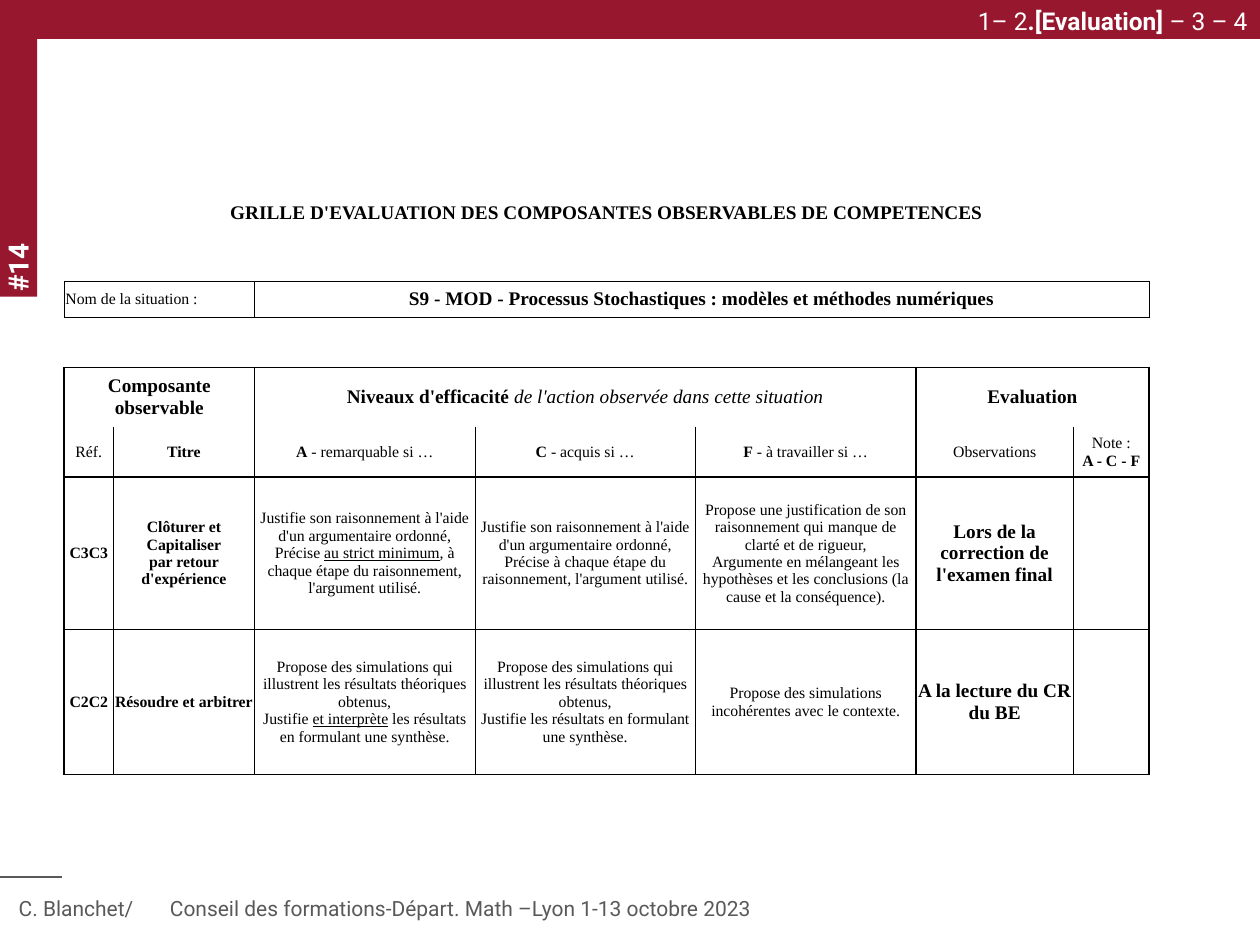
"""Build the slide showing the skills evaluation grid."""
from lxml.etree import SubElement
from pptx import Presentation
from pptx.dml.color import RGBColor
from pptx.enum.shapes import MSO_CONNECTOR as Connector, MSO_SHAPE as Shape
from pptx.enum.text import MSO_ANCHOR as Anchor, PP_ALIGN as Align
from pptx.oxml.ns import qn
from pptx.util import Emu, Inches, Pt

COLORS = {"red": "96172E", "white": "FFFFFF", "grey": "595959", "black": "000000"}
SANS, SERIF = "Roboto", "Times New Roman"
WIDTH, HEIGHT = 10, 7.5
BARS = [((-0.02, 0, 10.02, 0.31), 0), ((-1.04, 1.02, 2.36, 0.31), 270)]
LABELS = [
    ((-0.82, 1.28, 1.91, 0.36), 270, 16, "white", Align.LEFT, [("#14", "b")]),
    ((0.05, 7.06, 8.42, 0.3), 0, 12, "grey", Align.LEFT,
     [("C. Blanchet/\tConseil des formations-Départ. Math –Lyon 1-13 octobre 2023", "")]),
    ((6.78, 0, 3.22, 0.33), 0, 14, "white", Align.RIGHT,
     [("1– 2", ""), (".[Evaluation] ", "b"), ("– 3 – 4", "")]),
]
FOOTER_TAB = 1.2

GRID_AT = (0.51, 1.55)
COLUMNS = [0.39, 1.12, 1.75, 1.75, 1.75, 1.25, 0.6]
ROWS = [0.2, 0.15, 0.24, 0.15, 0.37, 0.35, 1.21, 1.15]
THIN, THICK = 0.5, 0.96
GROUP_EDGES = {0, 2, 5, 7}
ROW_EDGES = [0, 0, THIN, THIN, THICK, 0, THICK, THIN, THIN]
NAME_ROW, FIRST_GROUP_ROW = 2, 4

CELLS = {
    0: [(7, 11, [("GRILLE D'EVALUATION DES COMPOSANTES OBSERVABLES DE COMPETENCES", "b")])],
    2: [(2, 9, [("Nom de la situation :", "")]),
        (5, 11, [("S9 - MOD - Processus Stochastiques : modèles et méthodes numériques", "b")])],
    4: [(2, 11, [("Composante observable", "b")]),
        (3, 11, [("Niveaux d'efficacité ", "b"),
                 ("de l'action observée dans cette situation", "i")]),
        (2, 11, [("Evaluation", "b")])],
    5: [(1, 9, [("Réf.", "")]),
        (1, 9, [("Titre", "b")]),
        (1, 9, [("A", "b"), (" - remarquable si …", "")]),
        (1, 9, [("C", "b"), (" - acquis si …", "")]),
        (1, 9, [("F", "b"), (" - à travailler si …", "")]),
        (1, 9, [("Observations", "")]),
        (1, 9, [("Note :\n", ""), ("A - C - F", "b")])],
    6: [(1, 9, [("C3C3", "b")]),
        (1, 9, [("Clôturer et Capitaliser\npar retour d'expérience", "b")]),
        (1, 9, [("Justifie son raisonnement à l'aide d'un argumentaire ordonné,\nPrécise ", ""),
                ("au strict minimum", "u"),
                (", à chaque étape du raisonnement, l'argument utilisé.", "")]),
        (1, 9, [("Justifie son raisonnement à l'aide d'un argumentaire ordonné,\n"
                 "Précise à chaque étape du raisonnement, l'argument utilisé.", "")]),
        (1, 9, [("Propose une justification de son raisonnement qui manque de clarté et de "
                 "rigueur,\nArgumente en mélangeant les hypothèses et les conclusions "
                 "(la cause et la conséquence).", "")]),
        (1, 11, [("Lors de la correction de l'examen final", "b")])],
    7: [(1, 9, [("C2C2", "b")]),
        (1, 9, [("Résoudre et arbitrer", "b")]),
        (1, 9, [("Propose des simulations qui illustrent les résultats théoriques obtenus,\n"
                 "Justifie ", ""),
                ("et interprète", "u"),
                (" les résultats en formulant une synthèse.", "")]),
        (1, 9, [("Propose des simulations qui illustrent les résultats théoriques obtenus,\n"
                 "Justifie les résultats en formulant une synthèse.", "")]),
        (1, 9, [("Propose des simulations incohérentes avec le contexte.", "")]),
        (1, 11, [("A la lecture du CR du BE", "b")])],
}


def color(name):
    return RGBColor.from_string(COLORS[name])


def inches(values):
    return [Inches(value) for value in values]


def write(para, runs, font, size, tone, align):
    para.alignment = align
    para.font.name, para.font.size = font, Pt(size)
    para.font.color.rgb = color(tone)
    for text, style in runs:
        for index, line in enumerate(text.split("\n")):
            if index:
                para.add_line_break()
            if line:
                span = para.add_run()
                span.text = line
                span.font.bold = "b" in style
                span.font.italic = "i" in style
                span.font.underline = "u" in style


def add_frame(page):
    for place, turn in BARS:
        bar = page.shapes.add_shape(Shape.RECTANGLE, *inches(place))
        bar.rotation = turn
        bar.shadow.inherit = False
        bar.fill.solid()
        bar.fill.fore_color.rgb = color("red")
        bar.line.fill.background()
    rule = page.shapes.add_connector(Connector.STRAIGHT, *inches((0, 6.96, 0.49, 6.96)))
    rule.line.color.rgb = color("grey")
    rule.line.width = Pt(0.75)
    SubElement(rule._element.spPr, qn("a:effectLst"))
    for place, turn, size, tone, align, runs in LABELS:
        box = page.shapes.add_textbox(*inches(place))
        box.rotation = turn
        box.text_frame.word_wrap = True
        para = box.text_frame.paragraphs[0]
        if "\t" in runs[0][0]:
            tabs = SubElement(para._p.get_or_add_pPr(), qn("a:tabLst"))
            SubElement(tabs, qn("a:tab"), pos=str(Inches(FOOTER_TAB)), algn="l")
        write(para, runs, SANS, size, tone, align)


def column_edge(row, edge):
    if row >= FIRST_GROUP_ROW:
        return THICK if edge in GROUP_EDGES else THIN
    return THIN if row == NAME_ROW else 0


def draw_borders(cell, row, left, right):
    widths = {"lnL": column_edge(row, left), "lnR": column_edge(row, right),
              "lnT": ROW_EDGES[row], "lnB": ROW_EDGES[row + 1]}
    props = cell._tc.get_or_add_tcPr()
    for side, width in widths.items():
        line = SubElement(props, qn(f"a:{side}"), w=str(Pt(width)))
        if width:
            fill = SubElement(line, qn("a:solidFill"))
            SubElement(fill, qn("a:srgbClr"), val=COLORS["black"])
        else:
            SubElement(line, qn("a:noFill"))
    cell.fill.background()


def add_grid(page):
    size = inches((sum(COLUMNS), sum(ROWS)))
    table = page.shapes.add_table(len(ROWS), len(COLUMNS), *inches(GRID_AT), *size).table
    table.first_row = table.horz_banding = False
    for column, width in zip(table.columns, COLUMNS):
        column.width = Inches(width)
    for row, height in zip(table.rows, ROWS):
        row.height = Inches(height)
    for row in range(len(ROWS)):
        left = 0
        for count, points, runs in CELLS.get(row, []):
            cell = table.cell(row, left)
            if count > 1:
                cell.merge(table.cell(row, left + count - 1))
            cell.vertical_anchor = Anchor.MIDDLE
            cell.margin_left = cell.margin_right = Inches(0.01)
            is_name = row == NAME_ROW and left == 0
            write(cell.text_frame.paragraphs[0], runs, SERIF, points, "black",
                  Align.LEFT if is_name else Align.CENTER)
            for column in range(left, left + count):
                draw_borders(table.cell(row, column), row, left, left + count)
            left += count
        for column in range(left, len(COLUMNS)):
            draw_borders(table.cell(row, column), row, column, column + 1)


def main():
    deck = Presentation()
    deck.slide_width, deck.slide_height = Emu(Inches(WIDTH)), Emu(Inches(HEIGHT))
    page = deck.slides.add_slide(deck.slide_layouts[6])
    add_frame(page)
    add_grid(page)
    deck.save("out.pptx")


if __name__ == "__main__":
    main()
